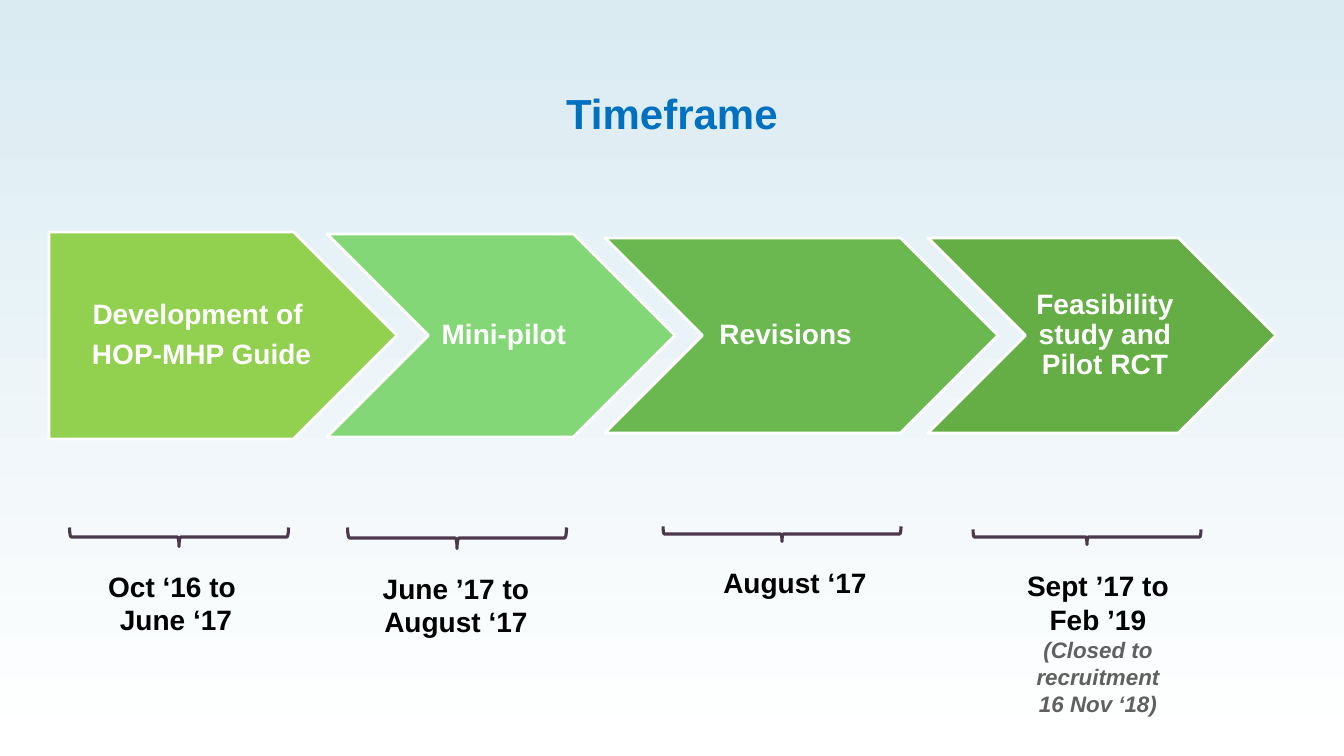
from pptx import Presentation
from pptx.dml.color import RGBColor
from pptx.enum.shapes import MSO_SHAPE
from pptx.enum.text import MSO_ANCHOR, PP_ALIGN
from pptx.util import Pt

PENTAGON, CHEVRON, BRACE = MSO_SHAPE.PENTAGON, MSO_SHAPE.CHEVRON, MSO_SHAPE.RIGHT_BRACE
LEFT, CENTER = PP_ALIGN.LEFT, PP_ALIGN.CENTER
MIDDLE, TOP = MSO_ANCHOR.MIDDLE, MSO_ANCHOR.TOP

SKY = RGBColor(0xDA, 0xEB, 0xF2)
WHITE = RGBColor(0xFF, 0xFF, 0xFF)
BLACK = RGBColor(0, 0, 0)
GREY = RGBColor(0x60, 0x60, 0x60)
BLUE = RGBColor(0x00, 0x70, 0xC0)
PLUM = RGBColor(0x4B, 0x38, 0x4C)
LIME = RGBColor(0x92, 0xD0, 0x50)
MINT = RGBColor(0x84, 0xD7, 0x76)
GREEN = RGBColor(0x6A, 0xB8, 0x4F)
FOREST = RGBColor(0x65, 0xAD, 0x45)

TITLE = "Timeframe"
TITLE_FORMAT = dict(size=Pt(30), bold=True, color=BLUE)
STAGE_FORMAT = dict(size=Pt(20), bold=True, color=WHITE)
DATE_FORMAT = dict(size=Pt(20), bold=True, color=BLACK)
NOTE_FORMAT = dict(size=Pt(16), bold=True, italic=True, color=GREY)

# shape, fill, left, width, height, alignment, left inset, lines
STAGES = [
    (PENTAGON, LIME, 49, 348, 207, CENTER, 12, ["Development of ", "HOP-MHP Guide"]),
    (CHEVRON, MINT, 327, 348, 203, CENTER, 9, ["Mini-pilot"]),
    (CHEVRON, GREEN, 605, 393, 195, LEFT, 17, ["Revisions"]),
    (CHEVRON, FOREST, 928, 348, 195, CENTER, 9, ["Feasibility study and Pilot RCT"]),
]
STAGE_MIDDLE = 335.5

# brace centre x, centre y, length, depth
BRACES = [(179, 537, 219, 19), (457, 538, 219, 21), (782, 534, 238, 15), (1087, 537, 228, 15)]

# left, top, height, lines
DATES = [
    (91, 564, 78, [("Oct ‘16 to ", DATE_FORMAT), ("June ‘17", DATE_FORMAT)]),
    (371, 566, 78, [("June ’17 to August ‘17", DATE_FORMAT)]),
    (710, 560, 44, [("August ‘17", DATE_FORMAT)]),
    (1013, 564, 190, [("Sept ’17 to Feb ’19", DATE_FORMAT),
                      ("(Closed to recruitment 16 Nov ‘18)", NOTE_FORMAT)]),
]
DATE_WIDTH = 170


def px(*lengths):
    """Turn lengths in px into EMU."""
    return [round(n * 914400 / 100.8) for n in lengths]


def write(sp, lines, align=CENTER, anchor=TOP, insets=(10, 5, 10, 5), **spacing):
    tf = sp.text_frame
    tf.word_wrap = True
    tf.vertical_anchor = anchor
    tf.margin_left, tf.margin_top, tf.margin_right, tf.margin_bottom = px(*insets)
    for i, (text, style) in enumerate(lines):
        p = tf.paragraphs[0] if i == 0 else tf.add_paragraph()
        p.alignment = align
        for name, value in spacing.items():
            setattr(p, name, value)
        r = p.add_run()
        r.text = text
        r.font.name = "Arial"
        for name, value in style.items():
            if name == "color":
                r.font.color.rgb = value
            else:
                setattr(r.font, name, value)


def add_outlined(slide, kind, box, line, weight):
    sp = slide.shapes.add_shape(kind, *px(*box))
    sp.shadow.inherit = False
    sp.line.color.rgb = line
    sp.line.width = Pt(weight)
    return sp


def main():
    prs = Presentation()
    prs.slide_width, prs.slide_height = px(1344, 756)
    slide = prs.slides.add_slide(prs.slide_layouts[6])

    fill = slide.background.fill
    fill.gradient()
    fill.gradient_angle = 270
    for stop, color, position in zip(fill.gradient_stops, (SKY, WHITE), (0, 1)):
        stop.color.rgb = color
        stop.position = position

    for kind, color, left, width, height, align, inset, lines in STAGES:
        box = (left, STAGE_MIDDLE - height / 2, width, height)
        sp = add_outlined(slide, kind, box, WHITE, 2)
        sp.fill.solid()
        sp.fill.fore_color.rgb = color
        write(sp, [(text, STAGE_FORMAT) for text in lines], align, MIDDLE,
              (inset, 6, 3, 6), line_spacing=0.9, space_after=Pt(7))

    title = slide.shapes.add_textbox(*px(48, 83, 1248, 61))
    write(title, [(TITLE, TITLE_FORMAT)])

    for x, y, length, depth in BRACES:
        box = (x - depth / 2, y - length / 2, depth, length)
        sp = add_outlined(slide, BRACE, box, PLUM, 2.25)
        sp.fill.background()
        sp.rotation = 90

    for left, top, height, lines in DATES:
        date = slide.shapes.add_textbox(*px(left, top, DATE_WIDTH, height))
        write(date, lines)

    prs.save("out.pptx")


if __name__ == "__main__":
    main()
